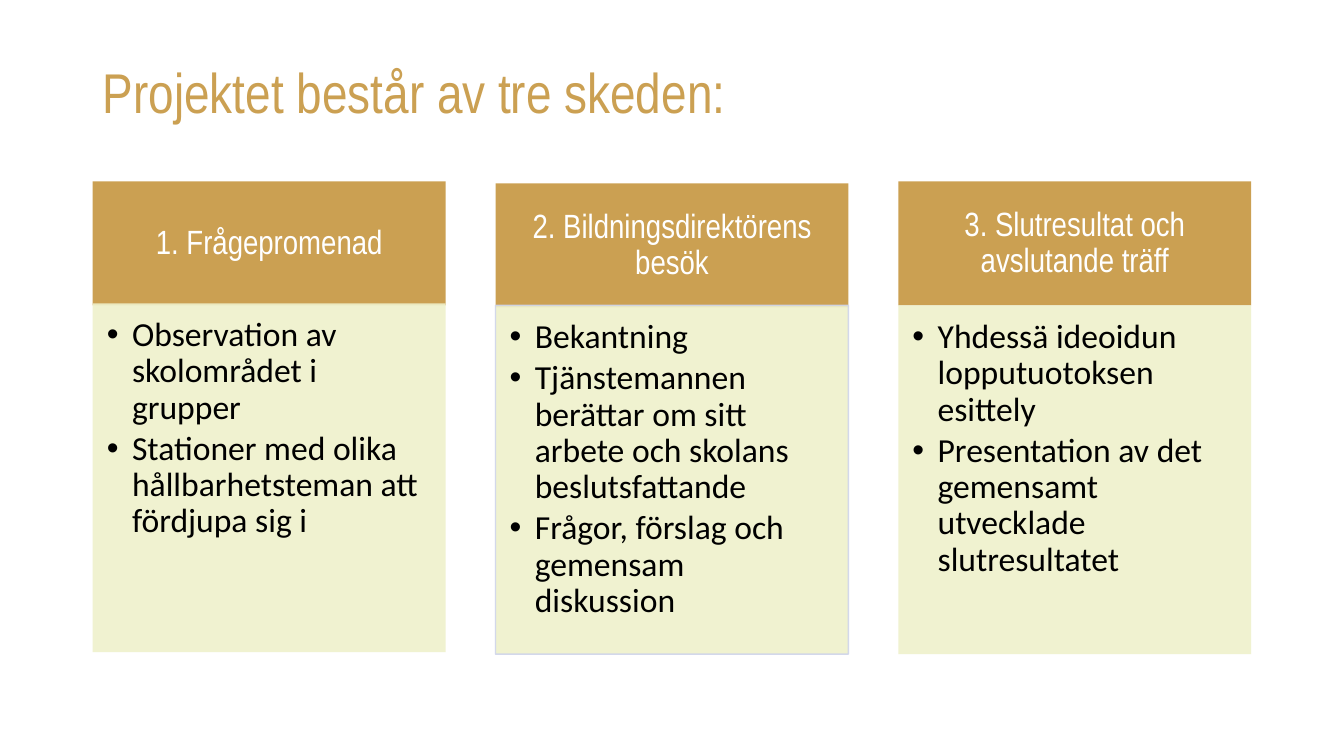
from pptx import Presentation
from pptx import util as u
from pptx.dml.color import RGBColor
from pptx.enum import shapes, text
from pptx.oxml.ns import qn
from lxml import etree

# Content: heading, bullets, drop of head, drop of body, outlined
TITLE = "Projektet består av tre skeden:"
STAGES = [
    ("1. Frågepromenad",
     ["Observation av skolområdet i grupper",
      "Stationer med olika hållbarhetsteman att fördjupa sig i"],
     0, 0, False),
    ("2. Bildningsdirektörens besök",
     ["Bekantning",
      "Tjänstemannen berättar om sitt arbete och skolans beslutsfattande",
      "Frågor, förslag och gemensam diskussion"],
     0.02, 0.02, True),
    ("3. Slutresultat och avslutande träff",
     ["Yhdessä ideoidun lopputuotoksen esittely",
      "Presentation av det gemensamt utvecklade slutresultatet"],
     0, 0.02, False),
]


class Theme:
    gold, cream, edge = "CBA052", "EFF1CB", "CFD5EA"
    white, black = "FFFFFF", "000000"
    head, body = "Arial Narrow", "Calibri"
    big, size = 40, 24
    alpha = 90


# Grid in inches
WIDE, HIGH = 13.33, 7.5
LEFT, SPAN = 0.92, 11.49
COL = 3.5
STEP = (SPAN - COL) / (len(STAGES) - 1)
HEAD_TOP, HEAD_H = 1.8, 1.23
BODY_TOP, BODY_H = 3.01, 3.46


def color(code):
    return RGBColor.from_string(code)


def style(para, face, size, code, after=0):
    para.line_spacing = 0.9
    para.space_after = u.Pt(size * after)
    for run in para.runs:
        font = run.font
        font.name, font.size = face, u.Pt(size)
        font.color.rgb = color(code)


def fade(part):
    """Make the colour of a fill or line slightly transparent."""
    tone = part.find(".//" + qn("a:srgbClr"))
    etree.SubElement(tone, qn("a:alpha"), val=str(Theme.alpha * 1000))


def block(slide, left, top, high, fill, insets, anchor):
    box = slide.shapes.add_shape(
        shapes.MSO_SHAPE.RECTANGLE,
        *map(u.Inches, (left, top, COL, high)))
    box.shadow.inherit = False
    box.fill.solid()
    box.fill.fore_color.rgb = color(fill)
    box.line.fill.background()
    frame = box.text_frame
    frame.word_wrap = True
    frame.vertical_anchor = anchor
    (frame.margin_left, frame.margin_top,
     frame.margin_right, frame.margin_bottom) = map(u.Inches, insets)
    return box


def bullet(para):
    props = para._p.get_or_add_pPr()
    props.set("marL", str(u.Inches(0.25)))
    props.set("indent", str(-u.Inches(0.25)))
    etree.SubElement(props, qn("a:buFont"), typeface="Arial")
    etree.SubElement(props, qn("a:buChar"), char="•")


def stage(slide, left, head, points, head_drop, body_drop, lined):
    # Heading
    box = block(slide, left, HEAD_TOP + head_drop, HEAD_H, Theme.gold,
                (0.19, 0.11, 0.19, 0.11), text.MSO_ANCHOR.MIDDLE)
    box.text_frame.text = head
    para = box.text_frame.paragraphs[0]
    para.alignment = text.PP_ALIGN.CENTER
    style(para, Theme.head, Theme.size, Theme.white, 0.35)

    # Bullets
    box = block(slide, left, BODY_TOP + body_drop, BODY_H, Theme.cream,
                (0.14, 0.14, 0.19, 0.21), text.MSO_ANCHOR.TOP)
    fade(box._element.spPr.find(qn("a:solidFill")))
    if lined:
        box.line.color.rgb = color(Theme.edge)
        box.line.width = u.Pt(1)
        fade(box._element.spPr.find(qn("a:ln")))
    box.text_frame.text = "\n".join(points)
    for para in box.text_frame.paragraphs:
        para.level = 1
        para.alignment = text.PP_ALIGN.LEFT
        bullet(para)
        style(para, Theme.body, Theme.size, Theme.black, 0.15)


def main():
    deck = Presentation()
    deck.slide_width, deck.slide_height = u.Inches(WIDE), u.Inches(HIGH)
    slide = deck.slides.add_slide(deck.slide_layouts[5])

    # Title
    title = slide.shapes.title
    title.left, title.top, title.width, title.height = map(
        u.Inches, (LEFT, 0.4, 11.5, 1.09))
    title.text_frame.text = TITLE
    title.text_frame.vertical_anchor = text.MSO_ANCHOR.MIDDLE
    para = title.text_frame.paragraphs[0]
    para.alignment = text.PP_ALIGN.LEFT
    style(para, Theme.head, Theme.big, Theme.gold)

    # Stages
    for i, parts in enumerate(STAGES):
        stage(slide, LEFT + i * STEP, *parts)

    deck.save("out.pptx")


if __name__ == "__main__":
    main()
